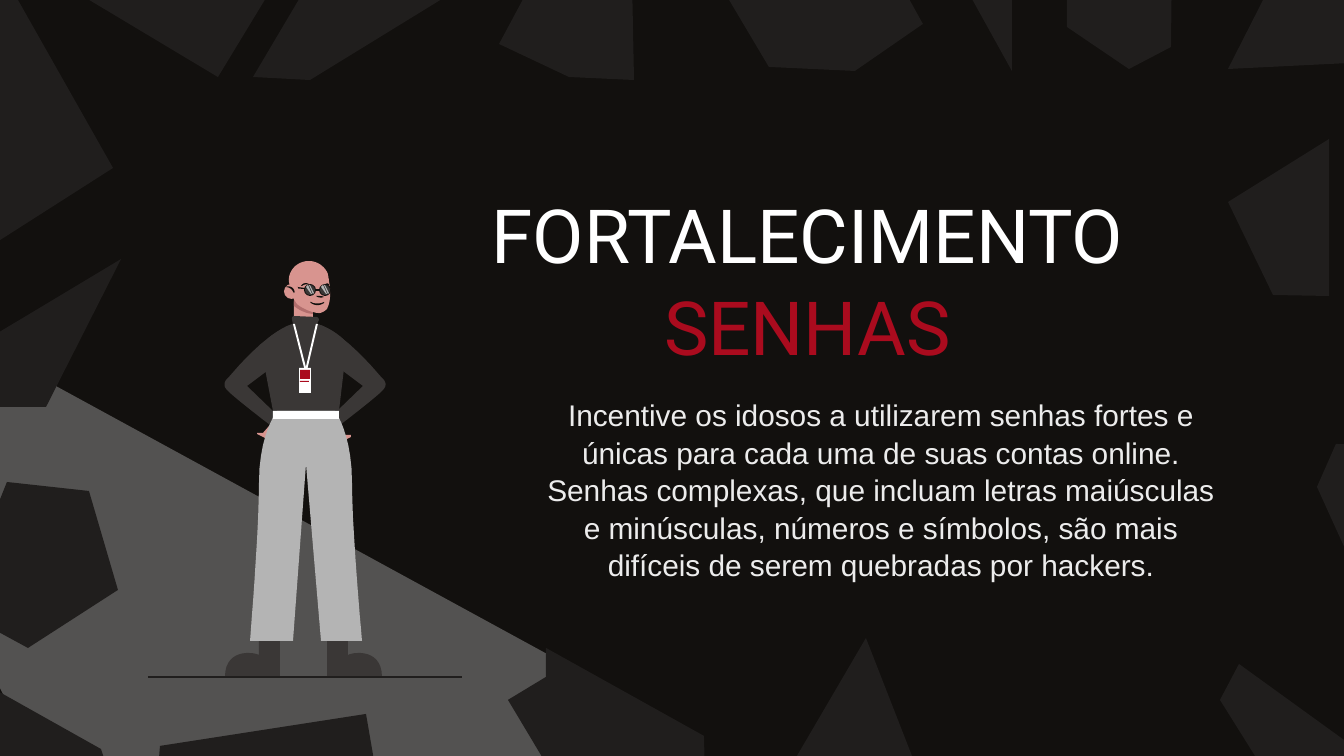
"""Build the slide on stronger passwords, with a standing figure beside the text."""
from lxml.etree import SubElement
from pptx import Presentation
from pptx.dml.color import RGBColor
from pptx.enum.shapes import MSO_CONNECTOR, MSO_SHAPE
from pptx.enum.text import MSO_ANCHOR, MSO_AUTO_SIZE, PP_ALIGN
from pptx.oxml.ns import qn
from pptx.util import Pt

PX = 914400 / 134.4
NIGHT, SHARD, WOOL, GREY = "12100E", "201E1D", "3A3736", "B4B4B4"
SKIN, SHADE, RED, WHITE = "D8948F", "B26E6D", "AA0B1E", "FFFFFF"
RECT, OVAL, ROUND = MSO_SHAPE.RECTANGLE, MSO_SHAPE.OVAL, MSO_SHAPE.ROUNDED_RECTANGLE

deck = Presentation()
deck.slide_width, deck.slide_height = round(1344 * PX), round(756 * PX)
slide = deck.slides.add_slide(deck.slide_layouts[0])
slide.background.fill.solid()
slide.background.fill.fore_color.rgb = RGBColor.from_string(NIGHT)


def paint(shape, hue):
    """Give a shape a plain fill with no outline or shadow."""
    shape.fill.solid()
    shape.fill.fore_color.rgb = RGBColor.from_string(hue)
    shape.line.fill.background()
    shape.shadow.inherit = False
    return shape


def draw(hue, path, flip=0):
    """Fill an outline of points and cubic curves, mirrored so x becomes flip - x."""
    dots = []
    for step in path:
        if len(step) == 2:
            dots.append(step)
            continue
        (x, y), (a, b, c, d, e, f) = dots[-1], step
        for i in range(1, 11):
            t = i / 10
            u = 1 - t
            k = (u ** 3, 3 * u * u * t, 3 * u * t * t, t ** 3)
            dots.append((k[0] * x + k[1] * a + k[2] * c + k[3] * e,
                         k[0] * y + k[1] * b + k[2] * d + k[3] * f))
    dots = [((flip - x if flip else x) * 10, y * 10) for x, y in dots]
    pen = slide.shapes.build_freeform(*dots[0], scale=PX / 10)
    pen.add_line_segments(dots[1:], close=True)
    return paint(pen.convert_to_shape(), hue)


floor = draw(WHITE, [(-128, 431), (222, 1134), (646, 708), (-34, 337)])
tint = floor._element.spPr.find(".//" + qn("a:srgbClr"))
SubElement(tint, qn("a:alpha"), val="28000")

shards = [
    [(1329, 296), (1273, 295), (1228, 202), (1329, 139)],
    [(1228, 69), (1289, -51), (1274, -89), (1370, -89), (1370, 62)],
    [(1129, 69), (1067, 27), (1067, -130), (1173, -130), (1171, 47)],
    [(1012, 71), (925, -86), (1012, -86)],
    [(855, 71), (769, 67), (687, -71), (720, -133), (836, -133), (923, 24)],
    [(634, 80), (569, 77), (499, 44), (589, -124), (630, -124)],
    [(310, 80), (253, 77), (372, -124), (492, -124), (499, -36)],
    [(218, 77), (31, -35), (-9, -30), (-9, -124), (340, -124)],
    [(-39, 265), (-39, -23), (1, -30), (113, 168)],
    [(-9, 407), (-9, 337), (121, 259), (46, 407)],
    [(28, 648), (-7, 629), (-7, 517), (7, 482), (89, 491), (118, 590)],
    [(-22, 761), (-22, 680), (101, 749), (105, 761)],
    [(159, 758), (160, 746), (366, 714), (387, 836)],
    [(578, 817), (508, 700), (546, 677), (546, 648), (704, 736), (706, 817)],
    [(794, 761), (866, 638), (914, 761)],
    [(1267, 775), (1220, 700), (1239, 664), (1362, 753), (1362, 775)],
    [(1362, 586), (1317, 487), (1336, 444), (1362, 445)],
]
for shard in shards:
    draw(SHARD, shard)

title, body = slide.placeholders
lines = [("FORTALECIMENTO", WHITE), ("SENHAS", RED)]
advice = ("Incentive os idosos a utilizarem senhas fortes e únicas para cada uma de suas "
          "contas online. Senhas complexas, que incluam letras maiúsculas e minúsculas, "
          "números e símbolos, são mais difíceis de serem quebradas por hackers.")
blocks = [
    (title, (413, 136, 827, 285), lines, "Roboto", 40, 1.03),
    (body, (523, 378, 716, 222), [(advice, "ECECEC")], "Arial", 16, 1.05),
]
for box, place, rows, face, size, gap in blocks:
    box.left, box.top, box.width, box.height = [round(n * PX) for n in place]
    frame = box.text_frame
    frame.word_wrap = True
    frame.auto_size = MSO_AUTO_SIZE.NONE
    frame.vertical_anchor = MSO_ANCHOR.MIDDLE
    frame.margin_left = frame.margin_right = round(13 * PX)
    frame.margin_top = frame.margin_bottom = round(13 * PX)
    frame.text = "\n".join(text for text, hue in rows)
    for para, (text, hue) in zip(frame.paragraphs, rows):
        para.alignment = PP_ALIGN.CENTER
        para.line_spacing = gap
        para.space_before = Pt(0)
        para.font.name, para.font.size = face, Pt(size)
        para.font.color.rgb = RGBColor.from_string(hue)
title.text_frame.paragraphs[0]._p.get_or_add_pPr().set("marR", str(round(38 * PX)))

shoe = [(327, 624), (327, 677), (382, 677), (382, 657, 368, 653, 359, 653),
        (352, 653, 348, 655, 348, 655), (348, 624)]
for flip in (0, 607):
    draw(WOOL, shoe, flip)

neck = slide.shapes.add_shape(ROUND, *[round(n * PX) for n in (294, 292, 19, 37)])
neck.adjustments[0] = 0.5
paint(neck, SKIN)
draw(SHADE, [(304, 292), (298, 292, 294, 296, 294, 300), (294, 306),
             (301, 312, 309, 314, 313, 314), (313, 300), (313, 296, 309, 292, 305, 292)])
draw(SKIN, [(309, 261), (298, 261, 290, 269, 289, 278), (288, 282, 292, 292, 293, 297),
            (294, 300, 296, 302, 297, 304), (302, 308, 312, 313, 319, 313),
            (321, 313, 324, 312, 327, 309), (331, 302, 331, 289, 329, 281),
            (329, 278, 328, 276, 328, 274), (325, 266, 317, 261, 309, 261)])
marks = [
    [(316, 296), (318, 298, 322, 298, 324, 297), (322, 296, 319, 296, 316, 296)],
    [(301, 286), (303, 282, 309, 283, 310, 285), (309, 284, 304, 284, 302, 286)],
    [(325, 285), (326, 283, 329, 283, 329, 285)],
    [(310, 302), (313, 306, 320, 306, 324, 303), (324, 302),
     (320, 304, 314, 304, 311, 302)],
    [(314, 289), (323, 289), (323, 291), (314, 291)],
    [(290, 286), (290, 288), (305, 289), (305, 288)],
]
for mark in marks:
    draw(NIGHT, mark)

discs = [(284, 284, 15, SKIN)]
for x in (304, 319):
    discs += [(x, 284, 12, NIGHT), (x + 1, 285, 10, WOOL)]
for x, y, size, hue in discs:
    disc = slide.shapes.add_shape(OVAL, *[round(n * PX) for n in (x, y, size, size)])
    paint(disc, hue)
for x in (304, 319):
    draw(GREY, [(x + 4, 285), (x + 2, 287), (x + 7, 294), (x + 8, 294)])
    draw(GREY, [(x + 6, 285), (x + 5, 285), (x + 9, 294), (x + 10, 293)])
draw(NIGHT, [(285, 287), (292, 287, 293, 292, 294, 293), (296, 292, 293, 284, 285, 287)])

draw(WOOL, [(298, 323), (298, 323, 267, 332, 261, 348), (273, 411), (339, 411),
            (347, 343), (347, 343, 332, 325, 310, 323)])
arm = [(293, 324), (293, 324, 271, 327, 228, 378), (228, 378, 220, 384, 228, 391),
       (236, 399, 270, 425, 270, 425), (277, 415), (247, 386), (271, 368)]
for flip in (0, 610):
    draw(WOOL, arm, flip)
draw(WOOL, [(294, 316), (293, 316, 292, 317, 292, 319), (293, 324), (317, 324),
            (319, 320), (319, 318, 318, 317, 316, 317)])
draw(WHITE, [(293, 324), (305, 371), (307, 371), (318, 324), (316, 324), (306, 367),
             (295, 324)])
draw(SKIN, [(276, 418), (263, 433), (257, 433), (257, 434), (265, 438)])
draw(SKIN, [(335, 419), (343, 441), (351, 437), (351, 435), (344, 435)])
draw(GREY, [(277, 411), (277, 411, 259, 434, 259, 482), (259, 532, 250, 641, 250, 641),
            (293, 641), (306, 464), (321, 641), (362, 641),
            (362, 641, 352, 532, 352, 482), (352, 434, 335, 411, 335, 411)])

bars = [(299, 368, 12, 25, WHITE), (300, 370, 10, 9, RED), (300, 381, 9, 1, RED),
        (273, 411, 66, 8, WHITE)]
for *place, hue in bars:
    paint(slide.shapes.add_shape(RECT, *[round(n * PX) for n in place]), hue)

ends = [round(n * PX) for n in (148, 677, 462, 677)]
ground = slide.shapes.add_connector(MSO_CONNECTOR.STRAIGHT, *ends)
ground.line.color.rgb = RGBColor.from_string(SHARD)
ground.line.width = Pt(1.5)
SubElement(ground._element.spPr, qn("a:effectLst"))

deck.save("out.pptx")
